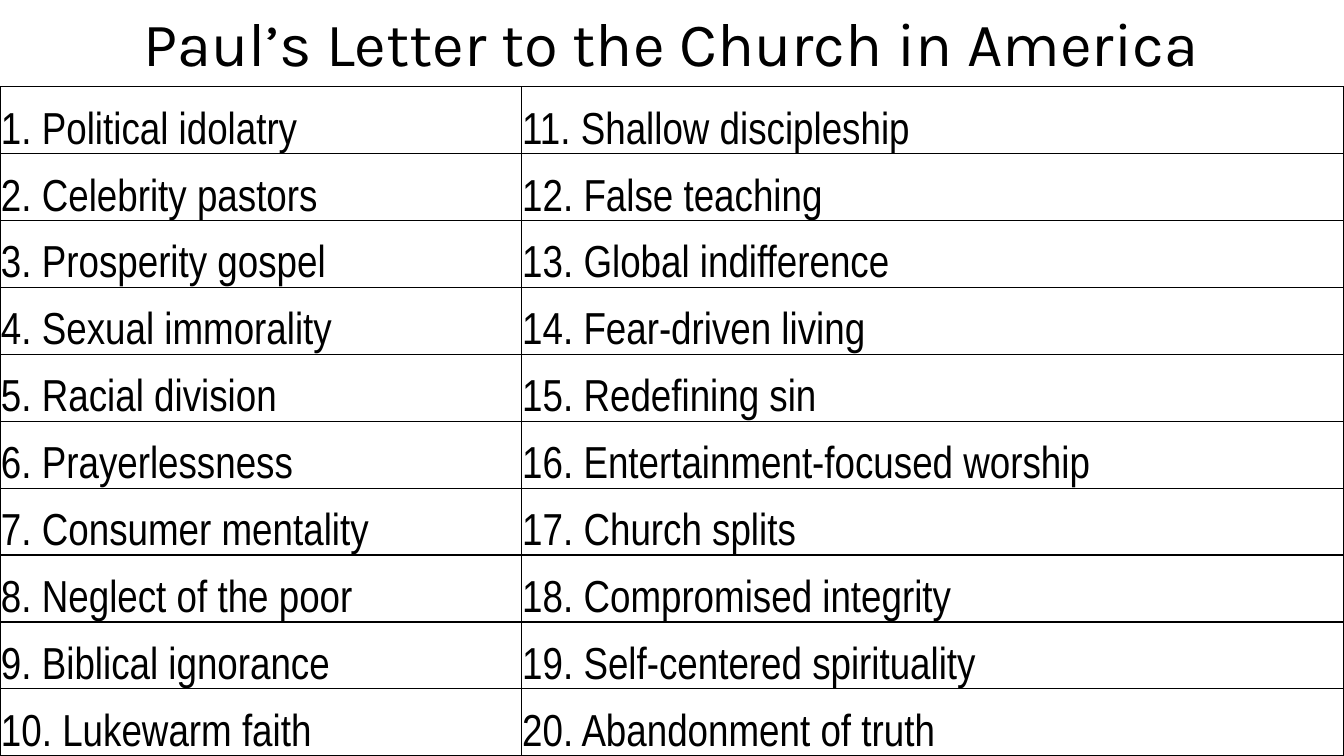
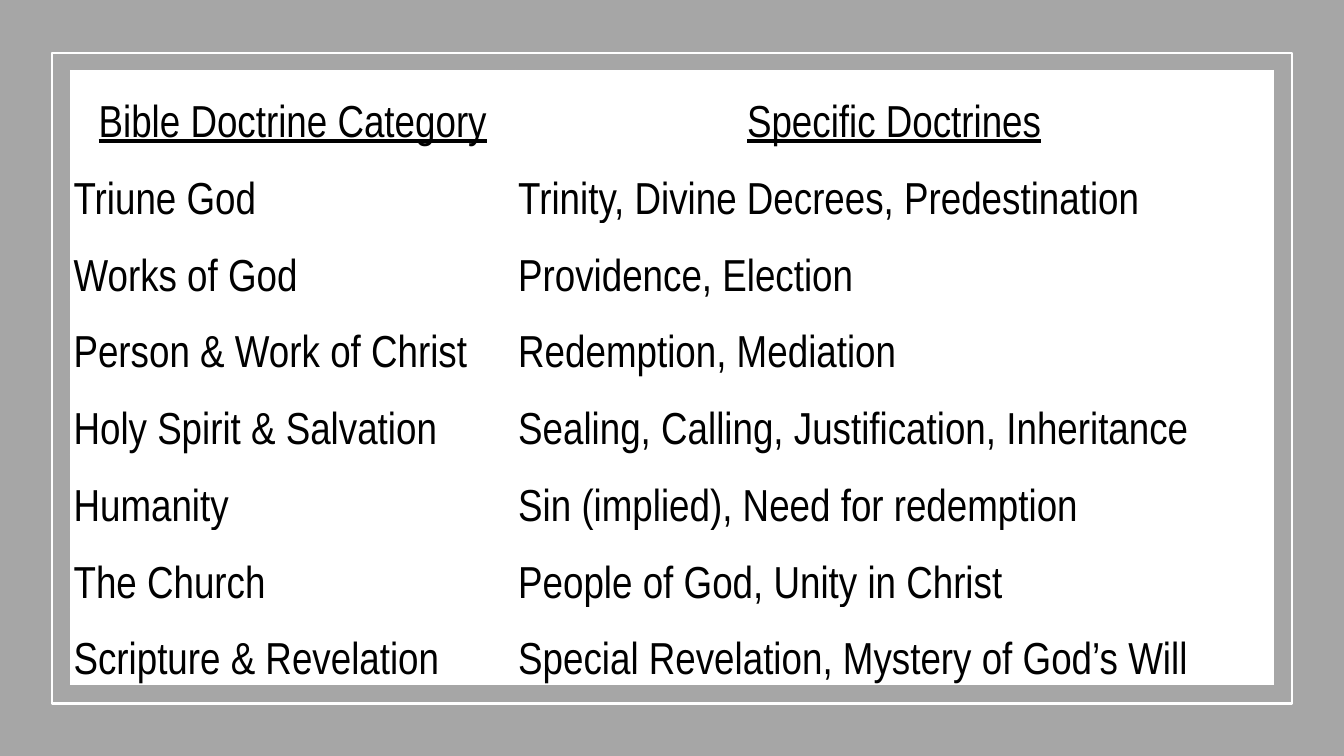
from lxml.etree import SubElement
from pptx import Presentation
from pptx.dml.color import RGBColor
from pptx.enum.shapes import MSO_SHAPE
from pptx.enum.text import MSO_ANCHOR, MSO_AUTO_SIZE, PP_ALIGN
from pptx.oxml.ns import qn
from pptx.util import Inches, Pt

COLORS = {"text": "000000", "grid": "000000", "backdrop": "A6A6A6", "panel": "FFFFFF", "frame": "FFFFFF"}
TITLE_FONT, BODY_FONT = "Karla", "Arial Narrow"
WIDTH, HEIGHT = 13.33, 7.5
PANEL = (0.7, 0.7, 11.93, 6.09)

CONCERNS = [
    "Political idolatry", "Celebrity pastors", "Prosperity gospel", "Sexual immorality",
    "Racial division", "Prayerlessness", "Consumer mentality", "Neglect of the poor",
    "Biblical ignorance", "Lukewarm faith", "Shallow discipleship", "False teaching",
    "Global indifference", "Fear-driven living", "Redefining sin",
    "Entertainment-focused worship", "Church splits", "Compromised integrity",
    "Self-centered spirituality", "Abandonment of truth",
]
DOCTRINES = [
    ("Bible Doctrine Category", "Specific Doctrines"),
    ("Triune God", "Trinity, Divine Decrees, Predestination"),
    ("Works of God", "Providence, Election"),
    ("Person & Work of Christ", "Redemption, Mediation"),
    ("Holy Spirit & Salvation", "Sealing, Calling, Justification, Inheritance"),
    ("Humanity", "Sin (implied), Need for redemption"),
    ("The Church", "People of God, Unity in Christ"),
    ("Scripture & Revelation", "Special Revelation, Mystery of God’s Will"),
]


def color(name):
    return RGBColor.from_string(COLORS[name])


def style_text(paragraph, font, size, align=PP_ALIGN.LEFT):
    paragraph.alignment = align
    paragraph.font.name = font
    paragraph.font.size = Pt(size)
    paragraph.font.color.rgb = color("text")


def add_title(slide, text):
    title = slide.shapes.add_textbox(0, 0, Inches(WIDTH), Inches(0.84)).text_frame
    title.word_wrap = True
    title.auto_size = MSO_AUTO_SIZE.SHAPE_TO_FIT_TEXT
    title.text = text
    style_text(title.paragraphs[0], TITLE_FONT, 44, PP_ALIGN.CENTER)


def add_rectangle(slide, box, fill=None, line=None):
    rectangle = slide.shapes.add_shape(MSO_SHAPE.RECTANGLE, *map(Inches, box))
    rectangle.shadow.inherit = False
    if fill:
        rectangle.fill.solid()
        rectangle.fill.fore_color.rgb = color(fill)
    else:
        rectangle.fill.background()
    if line:
        rectangle.line.color.rgb = color(line)
        rectangle.line.width = Pt(1.5)
    else:
        rectangle.line.fill.background()


def add_borders(cell, border):
    properties = cell._tc.get_or_add_tcPr()
    for side in ("a:lnL", "a:lnR", "a:lnT", "a:lnB"):
        edge = SubElement(properties, qn(side), w=str(Pt(1)))
        fill = SubElement(edge, qn("a:solidFill"))
        SubElement(fill, qn("a:srgbClr"), val=COLORS[border])


def fill_cell(cell, text, inset, border, heading):
    cell.margin_left = cell.margin_right = cell.margin_top = Inches(inset)
    cell.margin_bottom = 0
    cell.vertical_anchor = MSO_ANCHOR.BOTTOM
    if border:
        add_borders(cell, border)
    cell.fill.background()
    cell.text = text
    paragraph = cell.text_frame.paragraphs[0]
    style_text(paragraph, BODY_FONT, 32, PP_ALIGN.CENTER if heading else PP_ALIGN.LEFT)
    paragraph.font.underline = heading


def add_text_table(slide, box, first_width, rows, inset, border=None, has_heading=False):
    table = slide.shapes.add_table(len(rows), 2, *map(Inches, box)).table
    table.first_row = table.horz_banding = False
    for column, width in zip(table.columns, (first_width, box[2] - first_width)):
        column.width = Inches(width)
    for row_index, texts in enumerate(rows):
        for column_index, text in enumerate(texts):
            heading = has_heading and row_index == 0
            fill_cell(table.cell(row_index, column_index), text, inset, border, heading)


def build_letter(slide):
    numbered = [f"{number}. {concern}" for number, concern in enumerate(CONCERNS, 1)]
    half = len(numbered) // 2
    rows = list(zip(numbered[:half], numbered[half:]))
    add_text_table(slide, (0, 0.86, WIDTH, 6.64), 5.17, rows, 0.01, border="grid")
    add_title(slide, "Paul’s Letter to the Church in America")


def build_doctrines(slide):
    add_rectangle(slide, (0, 0, WIDTH, HEIGHT), fill="backdrop")
    add_rectangle(slide, (0.52, 0.53, 12.29, 6.45), line="frame")
    add_rectangle(slide, PANEL, fill="panel")
    add_text_table(slide, PANEL, 4.41, DOCTRINES, 0.03, has_heading=True)


def main():
    presentation = Presentation()
    presentation.slide_width = Inches(WIDTH)
    presentation.slide_height = Inches(HEIGHT)
    for build in (build_letter, build_doctrines):
        build(presentation.slides.add_slide(presentation.slide_layouts[6]))
    presentation.save("out.pptx")


if __name__ == "__main__":
    main()
